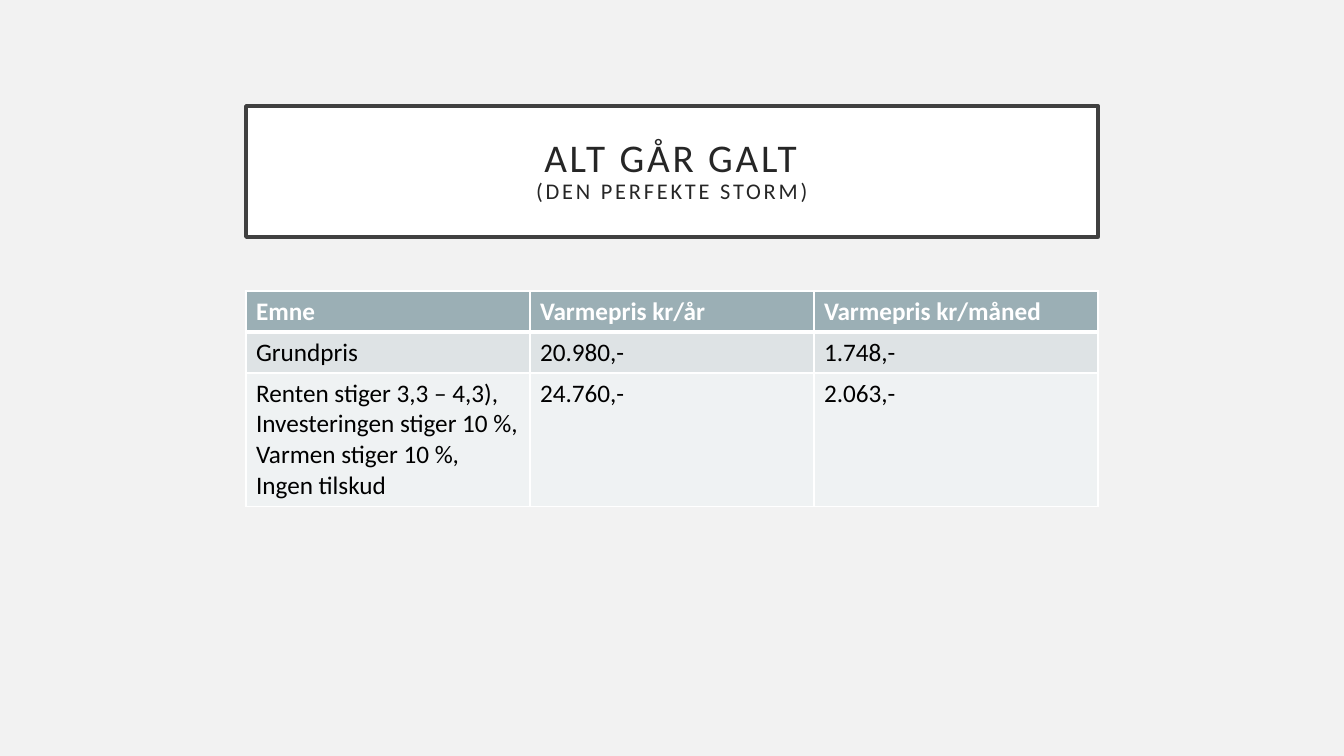
import copy

import pptx
import pptx.dml.color
import pptx.enum.text
import pptx.oxml
import pptx.oxml.ns
import pptx.util

PX = 914400 / 100.8
FONT = "Calibri"
WHITE = pptx.dml.color.RGBColor(0xFF, 0xFF, 0xFF)
BLACK = pptx.dml.color.RGBColor(0x00, 0x00, 0x00)
PAGE_GREY = pptx.dml.color.RGBColor(0xF2, 0xF2, 0xF2)
FRAME_GREY = pptx.dml.color.RGBColor(0x40, 0x40, 0x40)
TITLE_GREY = pptx.dml.color.RGBColor(0x26, 0x26, 0x26)
HEADER_FILL = pptx.dml.color.RGBColor(0x9B, 0xAF, 0xB5)
DARK_BAND = pptx.dml.color.RGBColor(0xDE, 0xE3, 0xE5)
LIGHT_BAND = pptx.dml.color.RGBColor(0xEF, 0xF2, 0xF3)


def px(length):
    return pptx.util.Emu(round(length * PX))


def write(para, text, sizes=(18,), color=BLACK, bold=False, spacing=0):
    """Write lines split by line breaks; the last size applies to the rest."""
    lines = text.split("\n")
    for index, line in enumerate(lines):
        span = para.add_run()
        span.text = line
        span.font.name = FONT
        span.font.size = pptx.util.Pt(sizes[min(index, len(sizes) - 1)])
        span.font.bold = bold
        span.font.color.rgb = color
        properties = span.font._element
        properties.set("spc", str(spacing * 100))
        if index < len(lines) - 1:
            # The break takes the format of the line it ends
            para.add_line_break()
            para._p[-1].append(copy.deepcopy(properties))


# Page
deck = pptx.Presentation()
deck.slide_width, deck.slide_height = px(1344), px(756)
page = deck.slides.add_slide(deck.slide_layouts[5])
page.background.fill.solid()
page.background.fill.fore_color.rgb = PAGE_GREY

# Framed title
title = page.shapes.title
title.left, title.top, title.width, title.height = px(246), px(106), px(852), px(131)
title.fill.solid()
title.fill.fore_color.rgb = WHITE
title.line.color.rgb = FRAME_GREY
title.line.width = pptx.util.Pt(2.5)
frame = title.text_frame
frame.word_wrap = True
frame.auto_size = pptx.enum.text.MSO_AUTO_SIZE.NONE
frame.vertical_anchor = pptx.enum.text.MSO_ANCHOR.MIDDLE
frame.margin_left = frame.margin_right = px(20)
frame.margin_top = frame.margin_bottom = px(20)
para = frame.paragraphs[0]
para.alignment = pptx.enum.text.PP_ALIGN.CENTER
para.line_spacing = 0.9
write(para, "ALT GÅR GALT\n(DEN PERFEKTE STORM)", sizes=(28, 16), color=TITLE_GREY, spacing=2)

# Price table
prices = [
    ["Emne", "Varmepris kr/år", "Varmepris kr/måned"],
    ["Grundpris", "20.980,-", "1.748,-"],
    ["Renten stiger 3,3 – 4,3), Investeringen stiger 10 %,\nVarmen stiger 10 %,\nIngen tilskud",
     "24.760,-", "2.063,-"],
]
row_heights = [41, 41, 132]
row_fills = [HEADER_FILL, DARK_BAND, LIGHT_BAND]
table = page.shapes.add_table(3, 3, px(246), px(291), px(852), px(sum(row_heights))).table
for column in table.columns:
    column.width = px(284)

for row, texts in enumerate(prices):
    table.rows[row].height = px(row_heights[row])
    header = row == 0
    # White borders, thicker below the header
    borders = {"lnL": 1, "lnR": 1, "lnT": 3 if row == 1 else 1, "lnB": 3 if header else 1}
    for column, text in enumerate(texts):
        cell = table.cell(row, column)
        properties = cell._tc.get_or_add_tcPr()
        for side, width in borders.items():
            properties.append(pptx.oxml.parse_xml(
                f'<a:{side} {pptx.oxml.ns.nsdecls("a")} w="{width * 12700}">'
                f'<a:solidFill><a:srgbClr val="{WHITE}"/></a:solidFill></a:{side}>'))
        cell.fill.solid()
        cell.fill.fore_color.rgb = row_fills[row]
        write(cell.text_frame.paragraphs[0], text, color=WHITE if header else BLACK, bold=header)

deck.save("out.pptx")
